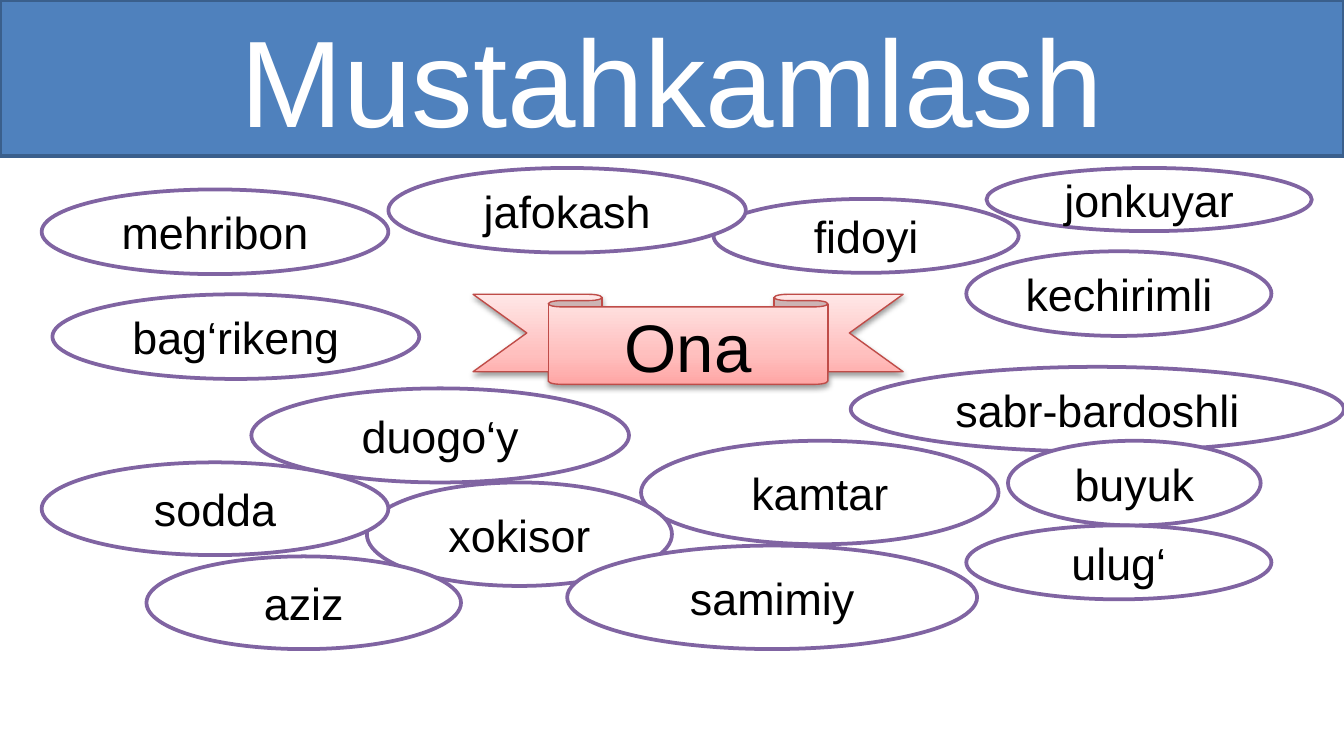
import copy
import pptx
import pptx.util
import pptx.dml.color
import pptx.enum.shapes
import pptx.enum.text
import pptx.oxml
import pptx.oxml.ns

Inches = pptx.util.Inches
Pt = pptx.util.Pt
KINDS = pptx.enum.shapes.MSO_SHAPE

COLORS = {
    "paper": "FFFFFF", "ink": "000000", "blue": "4F81BD", "navy": "3A5F8C",
    "purple": "8064A2", "red": "BF4C48",
    "rose": "FFA6A5", "pink": "FFC0BF", "blush": "FFE7E7",
}

BLEND = [(0, "rose"), (0.35, "pink"), (1, "blush")]

TRAITS = [
    ("mehribon", 0.31, 1.41, 2.58, 0.63),
    ("bag‘rikeng", 0.39, 2.19, 2.73, 0.63),
    ("fidoyi", 5.31, 1.48, 2.27, 0.55),
    ("jonkuyar", 7.34, 1.25, 2.42, 0.47),
    ("kechirimli", 7.19, 1.87, 2.27, 0.63),
    ("sabr-bardoshli", 6.33, 2.73, 3.67, 0.63),
    ("jafokash", 2.89, 1.25, 2.66, 0.63),
    ("duogo‘y", 1.87, 2.89, 2.81, 0.7),
    ("kamtar", 4.77, 3.28, 2.66, 0.77),
    ("xokisor", 2.73, 3.59, 2.27, 0.77),
    ("sodda", 0.31, 3.44, 2.58, 0.69),
    ("samimiy", 4.22, 4.06, 3.05, 0.77),
    ("buyuk", 7.5, 3.28, 1.88, 0.63),
    ("ulug‘", 7.19, 3.91, 2.27, 0.55),
    ("aziz", 1.09, 4.14, 2.34, 0.69),
]


def tint(name):
    return pptx.dml.color.RGBColor.from_string(COLORS[name])


def apply(item, values):
    for name, value in values.items():
        setattr(item, name, value)


def place(shape, box):
    names = ("left", "top", "width", "height")
    apply(shape, dict(zip(names, map(Inches, box))))


def outline(shape, color, width):
    shape.line.color.rgb = tint(color)
    shape.line.width = Pt(width)


def paint(shape, color):
    shape.fill.solid()
    shape.fill.fore_color.rgb = tint(color)


def write(shape, text, size, color):
    frame = shape.text_frame
    apply(frame, {
        "text": text,
        "word_wrap": True,
        "auto_size": pptx.enum.text.MSO_AUTO_SIZE.NONE,
        "vertical_anchor": pptx.enum.text.MSO_ANCHOR.MIDDLE,
        "margin_left": 0,
        "margin_right": 0,
    })
    line = frame.paragraphs[0]
    line.alignment = pptx.enum.text.PP_ALIGN.CENTER
    font = line.runs[0].font
    apply(font, {"name": "Arial", "size": Pt(size)})
    font.color.rgb = tint(color)


def add_form(slide, kind, box):
    shape = slide.shapes.add_shape(kind, *map(Inches, box))
    shape.shadow.inherit = False
    return shape


def blend(shape, stops):
    shape.fill.gradient()
    shape.fill.gradient_angle = 90
    group = shape._element.spPr.find(".//" + pptx.oxml.ns.qn("a:gsLst"))
    while len(group) < len(stops):
        group.append(copy.deepcopy(group[-1]))
    for stop, (place_at, color) in zip(shape.fill.gradient_stops, stops):
        stop.position = place_at
        stop.color.rgb = tint(color)


def cast(shape):
    effects = shape._element.spPr.find(pptx.oxml.ns.qn("a:effectLst"))
    effects.append(pptx.oxml.parse_xml(
        f'<a:outerShdw {pptx.oxml.ns.nsdecls("a")} blurRad="{Pt(3.1)}" '
        f'dist="{Pt(1.6)}" dir="5400000" rotWithShape="0">'
        f'<a:srgbClr val="{COLORS["ink"]}"><a:alpha val="38000"/></a:srgbClr>'
        '</a:outerShdw>'))


def add_title(slide, text):
    title = slide.shapes.title
    place(title, (0, 0, 10, 1.16))
    paint(title, "blue")
    outline(title, "navy", 2)
    write(title, text, 66, "paper")


def add_ribbon(slide, text):
    ribbon = add_form(slide, KINDS.DOWN_RIBBON, (3.52, 2.19, 3.2, 0.67))
    ribbon.adjustments[0] = 0.14
    ribbon.adjustments[1] = 0.65
    blend(ribbon, BLEND)
    outline(ribbon, "red", 0.75)
    cast(ribbon)
    write(ribbon, text, 36, "ink")


def add_trait(slide, text, *box):
    oval = add_form(slide, KINDS.OVAL, box)
    paint(oval, "paper")
    outline(oval, "purple", 2)
    write(oval, text, 24, "ink")


def main():
    deck = pptx.Presentation()
    wide = Inches(10)
    apply(deck, {"slide_width": wide, "slide_height": wide * 9 // 16})
    slide = deck.slides.add_slide(deck.slide_layouts[5])
    add_title(slide, "Mustahkamlash")
    add_ribbon(slide, "Ona")
    for trait in TRAITS:
        add_trait(slide, *trait)
    deck.save("out.pptx")


if __name__ == "__main__":
    main()
